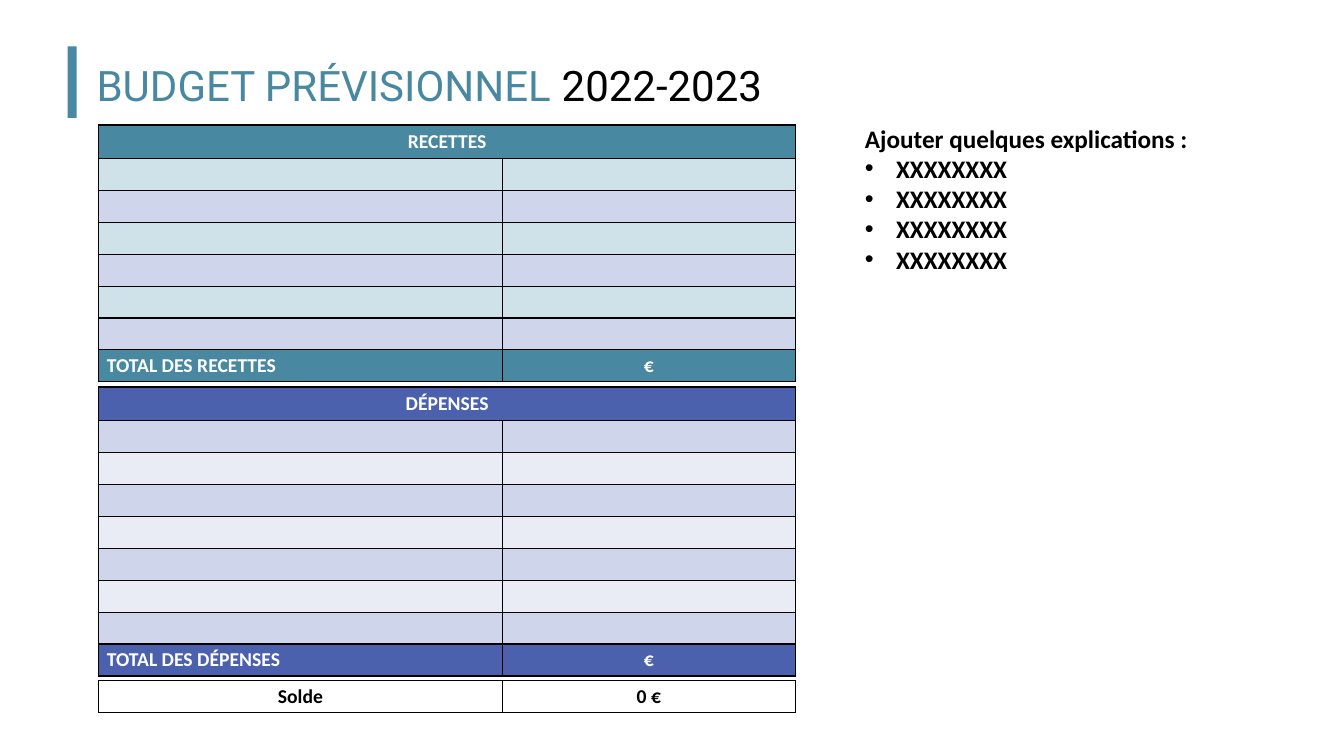
from lxml.etree import SubElement
from pptx import Presentation
from pptx.dml.color import RGBColor
from pptx.enum.shapes import MSO_SHAPE
from pptx.enum.text import MSO_ANCHOR, MSO_AUTO_SIZE, PP_ALIGN
from pptx.oxml import parse_xml
from pptx.oxml.ns import nsdecls, qn
from pptx.util import Inches, Pt

TEAL = RGBColor(0x49, 0x88, 0xA1)
PALE_TEAL = RGBColor(0xCF, 0xE2, 0xE9)
BLUE = RGBColor(0x4C, 0x61, 0xAE)
PALE_BLUE = RGBColor(0xCF, 0xD5, 0xEA)
PALE_GREY = RGBColor(0xE9, 0xEB, 0xF5)
WHITE = RGBColor(0xFF, 0xFF, 0xFF)
BLACK = RGBColor(0x00, 0x00, 0x00)


def style_run(r, size, color, name="Calibri", bold=True):
    """Set the font of a run."""
    r.font.size = Pt(size)
    r.font.name = name
    r.font.bold = bold
    r.font.color.rgb = color


def add_text_box(s, left, top, width, height):
    """Add a wrapping text box and return its text frame."""
    tf = s.shapes.add_textbox(Inches(left), Inches(top), Inches(width), Inches(height)).text_frame
    tf.word_wrap = True
    return tf


def add_title(s, label, years):
    """Add the two-colour title and its accent bar."""
    tf = add_text_box(s, 0.86, 0.42, 12.06, 0.75)
    tf.vertical_anchor = MSO_ANCHOR.MIDDLE
    p = tf.paragraphs[0]
    p.line_spacing = 1.2
    for text, color in ((label, TEAL), (years, BLACK)):
        r = p.add_run()
        r.text = text
        style_run(r, 30, color, "Roboto", False)
    bar = s.shapes.add_shape(MSO_SHAPE.RECTANGLE, Inches(0.67), Inches(0.46), Inches(0.09), Inches(0.71))
    bar.shadow.inherit = False
    bar.fill.solid()
    bar.fill.fore_color.rgb = TEAL
    bar.line.fill.background()


def add_borders(cell):
    """Draw a thin black line on each side of a cell."""
    tc_pr = cell._tc.get_or_add_tcPr()
    for i, side in enumerate(("lnL", "lnR", "lnT", "lnB")):
        tc_pr.insert(i, parse_xml(
            f'<a:{side} {nsdecls("a")} w="{Pt(1)}"><a:solidFill>'
            f'<a:srgbClr val="{BLACK}"/></a:solidFill></a:{side}>'))


def fill_cell(cell, text, fill, color, align, inset=0.04):
    """Set the text, fill, margins and borders of a cell."""
    cell.margin_left = cell.margin_right = Inches(inset + 0.04)
    cell.margin_top = cell.margin_bottom = Inches(inset)
    if fill is None:
        cell.fill.background()
    else:
        cell.fill.solid()
        cell.fill.fore_color.rgb = fill
    add_borders(cell)
    p = cell.text_frame.paragraphs[0]
    p.alignment = align
    if text:
        p.text = text
        style_run(p.runs[0], 14, color)
    else:
        SubElement(p._p, qn("a:endParaRPr"), sz="1200")


def add_grid(s, top, height, rows):
    """Add an unstyled two-column table with equal rows."""
    table = s.shapes.add_table(rows, 2, Inches(0.98), Inches(top), Inches(6.91), Inches(height)).table
    table.first_row = table.horz_banding = False
    table.columns[0].width = Inches(4)
    table.columns[1].width = Inches(2.91)
    return table


def add_budget(s, top, height, heading, total, main_color, bands, lines):
    """Add a budget table with a heading, banded blank lines and a total."""
    table = add_grid(s, top, height, lines + 2)
    for col, text in enumerate((heading, "")):
        fill_cell(table.cell(0, col), text, main_color, WHITE, PP_ALIGN.CENTER, 0.05)
    table.cell(0, 0).merge(table.cell(0, 1))
    for row in range(lines):
        for col in range(2):
            fill_cell(table.cell(row + 1, col), "", bands[row % 2], BLACK, PP_ALIGN.LEFT)
    fill_cell(table.cell(lines + 1, 0), total, main_color, WHITE, PP_ALIGN.LEFT)
    fill_cell(table.cell(lines + 1, 1), "€", main_color, WHITE, PP_ALIGN.CENTER)


def add_balance(s, top, height, texts):
    """Add the one-row balance table."""
    table = add_grid(s, top, height, 1)
    for col, text in enumerate(texts):
        fill_cell(table.cell(0, col), text, None, BLACK, PP_ALIGN.CENTER)


def add_bullet(p):
    """Give a paragraph a round bullet and a hanging indent."""
    p_pr = p._p.get_or_add_pPr()
    p_pr.set("marL", str(Inches(0.31)))
    p_pr.set("indent", str(-Inches(0.31)))
    SubElement(p_pr, qn("a:buFont"), typeface="Arial")
    SubElement(p_pr, qn("a:buChar"), char="•")


def add_explanations(s, heading, items):
    """Add the heading and bulleted explanations."""
    tf = add_text_box(s, 8.48, 1.17, 4.44, 1.62)
    tf.auto_size = MSO_AUTO_SIZE.SHAPE_TO_FIT_TEXT
    tf.text = "\n".join([heading, *items])
    for p in tf.paragraphs[1:]:
        add_bullet(p)
    for p in tf.paragraphs:
        style_run(p.runs[0], 18, BLACK)


def main():
    """Build the budget slide."""
    prs = Presentation()
    prs.slide_width, prs.slide_height = Inches(13.33), Inches(7.5)
    s = prs.slides.add_slide(prs.slide_layouts[6])
    add_title(s, "BUDGET PRÉVISIONNEL", " 2022-2023")
    add_budget(s, 1.24, 2.53, "RECETTES", "TOTAL DES RECETTES", TEAL, (PALE_TEAL, PALE_BLUE), 6)
    add_budget(s, 3.84, 2.85, "DÉPENSES", "TOTAL DES DÉPENSES", BLUE, (PALE_BLUE, PALE_GREY), 7)
    add_balance(s, 6.75, 0.32, ("Solde", "0 €"))
    add_explanations(s, "Ajouter quelques explications :", ["XXXXXXXX"] * 4)
    prs.save("out.pptx")


if __name__ == "__main__":
    main()
